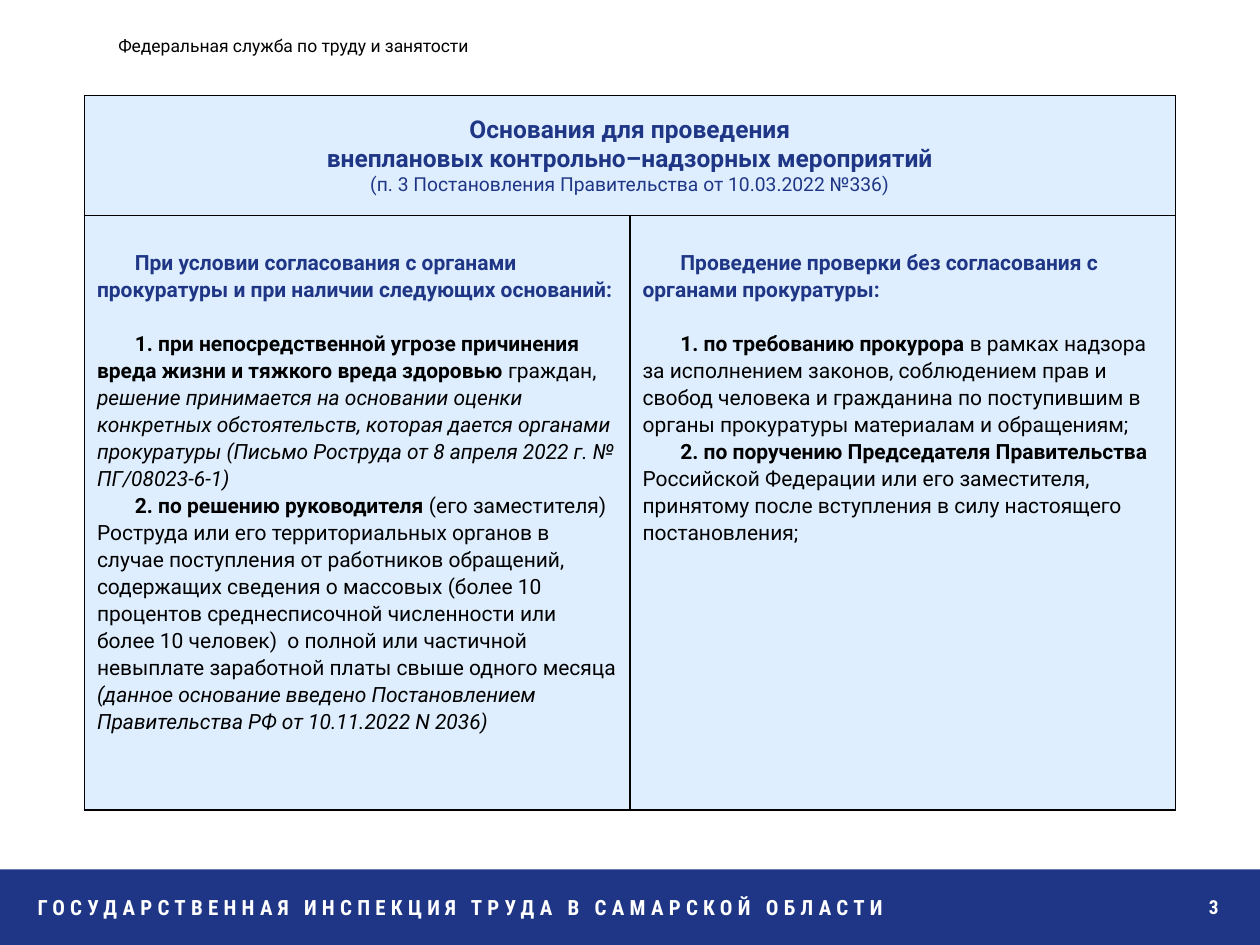
"""Build the slide on grounds for unscheduled labour inspections."""
from dataclasses import dataclass

from lxml import etree
from pptx import Presentation
from pptx import util as u
from pptx.dml.color import RGBColor
from pptx.enum import shapes, text
from pptx.oxml.ns import qn

NAVY, PALE, BLACK, WHITE = "1E3685", "DEEEFE", "000000", "FFFFFF"
BODY, NARROW = "Roboto", "Roboto Condensed"
WIDTH, HEIGHT = u.Inches(10), u.Inches(7.5)
LEFT, CENTER, RIGHT = text.PP_ALIGN.LEFT, text.PP_ALIGN.CENTER, text.PP_ALIGN.RIGHT
TOP, MIDDLE = text.MSO_ANCHOR.TOP, text.MSO_ANCHOR.MIDDLE


@dataclass(frozen=True)
class Span:
    """A stretch of text in one format."""
    words: str
    bold: bool = False
    italic: bool = False
    color: str = BLACK
    size: float = 12
    font: str = BODY
    tracking: float = 0


@dataclass(frozen=True)
class Line:
    """A paragraph made of spans."""
    spans: tuple[Span, ...]
    align: text.PP_ALIGN = LEFT
    indent: float = 0
    spacing: float = 1.0
    after: float = 0


@dataclass(frozen=True)
class Label:
    """A one-line text box placed in percent of the slide."""
    area: tuple[float, float, float, float]
    span: Span
    align: text.PP_ALIGN = LEFT
    anchor: text.MSO_ANCHOR = TOP
    grows: bool = True


def across(percent: float) -> int:
    """Return a share of the slide width."""
    return round(WIDTH * percent / 100)


def down(percent: float) -> int:
    """Return a share of the slide height."""
    return round(HEIGHT * percent / 100)


def place(left: float, top: float, width: float, height: float) -> tuple[int, int, int, int]:
    """Turn percentages into a slide area."""
    return across(left), down(top), across(width), down(height)


def paint(target, color: str) -> None:
    """Give a fill one solid colour."""
    target.solid()
    target.fore_color.rgb = RGBColor.from_string(color)


def write(frame, lines: tuple[Line, ...]) -> None:
    """Write formatted paragraphs into a text frame."""
    for index, line in enumerate(lines):
        paragraph = frame.add_paragraph() if index else frame.paragraphs[0]
        paragraph.alignment = line.align
        paragraph.line_spacing = line.spacing
        paragraph.space_after = u.Pt(line.after)
        if line.indent:
            paragraph._p.get_or_add_pPr().set("indent", str(u.Inches(line.indent)))
        for span in line.spans:
            run = paragraph.add_run()
            run.text = span.words
            run.font.name, run.font.size = span.font, u.Pt(span.size)
            run.font.bold, run.font.italic = span.bold, span.italic
            paint(run.font.fill, span.color)
            if span.tracking:
                run._r.get_or_add_rPr().set("spc", str(round(span.tracking * 100)))


def add_label(slide, label: Label) -> None:
    """Add a text box."""
    frame = slide.shapes.add_textbox(*place(*label.area)).text_frame
    frame.word_wrap = True
    frame.vertical_anchor = label.anchor
    if label.grows:
        frame.auto_size = text.MSO_AUTO_SIZE.SHAPE_TO_FIT_TEXT
    write(frame, (Line((label.span,), label.align),))


def outline(cell, color: str, points: float) -> None:
    """Draw all four borders of a cell."""
    properties = cell._tc.get_or_add_tcPr()
    for index, side in enumerate(("lnL", "lnR", "lnT", "lnB")):
        border = etree.Element(qn(f"a:{side}"), w=str(u.Pt(points)))
        solid = etree.SubElement(border, qn("a:solidFill"))
        etree.SubElement(solid, qn("a:srgbClr"), val=color)
        properties.insert(index, border)


def grounds(title: str, *items: tuple[Span, ...]) -> tuple[Line, ...]:
    """Return a column's heading followed by its numbered items."""
    heading = Line((Span(title, bold=True, color=NAVY),), indent=0.3, spacing=1.1, after=15.5)
    return heading, *(Line(item, indent=0.3, spacing=1.1) for item in items)


HEADING = tuple(Line((span,), CENTER) for span in (
    Span("Основания для проведения", True, color=NAVY, size=14),
    Span("внеплановых контрольно–надзорных мероприятий", True, color=NAVY, size=14),
    Span("(п. 3 Постановления Правительства от 10.03.2022 №336)", color=NAVY, size=11),
))

COLUMNS = (
    grounds(
        "При условии согласования с органами прокуратуры и при наличии следующих оснований:",
        (Span("1. при непосредственной угрозе причинения вреда жизни и тяжкого вреда здоровью ", True),
         Span("граждан, "),
         Span("решение принимается на основании оценки конкретных обстоятельств, которая дается "
              "органами прокуратуры (Письмо Роструда от 8 апреля 2022 г. № ПГ/08023-6-1)", italic=True)),
        (Span("2. по решению руководителя ", True),
         Span("(его заместителя) Роструда или его территориальных органов в случае поступления от "
              "работников обращений, содержащих сведения о массовых (более 10 процентов "
              "среднесписочной численности или более 10 человек)  о полной или частичной невыплате "
              "заработной платы свыше одного месяца "),
         Span("(данное основание введено Постановлением Правительства РФ от 10.11.2022 N 2036)",
              italic=True)),
    ),
    grounds(
        "Проведение проверки без согласования с органами прокуратуры:",
        (Span("1. по требованию прокурора ", True),
         Span("в рамках надзора за исполнением законов, соблюдением прав и свобод человека и "
              "гражданина по поступившим в органы прокуратуры материалам и обращениям;")),
        (Span("2. по поручению Председателя Правительства ", True),
         Span("Российской Федерации или его заместителя, принятому после вступления в силу "
              "настоящего постановления;")),
    ),
)

LABELS = (
    Label((8.4, 3.07, 36.1, 3.6), Span("Федеральная служба по труду и занятости", size=10)),
    Label((2, 94, 82.7, 4),
          Span("ГОСУДАРСТВЕННАЯ ИНСПЕКЦИЯ ТРУДА В САМАРСКОЙ ОБЛАСТИ",
               True, color=WHITE, font=NARROW, tracking=3)),
    Label((85.8, 93.33, 11.9, 5.33), Span("3", True, color=WHITE, size=11, font=NARROW),
          RIGHT, MIDDLE, grows=False),
)


def add_footer_band(slide) -> None:
    """Add the band along the bottom of the slide."""
    band = slide.shapes.add_shape(shapes.MSO_SHAPE.RECTANGLE, *place(0, 92, 100, 8))
    band.shadow.inherit = False
    paint(band.fill, NAVY)
    band.line.fill.background()


def add_grounds_table(slide) -> None:
    """Add the table with a merged heading over two columns."""
    table = slide.shapes.add_table(2, 2, *place(6.7, 10.13, 86.6, 75.6)).table
    table.first_row = table.horz_banding = False
    for row, share in zip(table.rows, (12.67, 62.93)):
        row.height = down(share)
    for cell in table.iter_cells():
        paint(cell.fill, PALE)
        outline(cell, BLACK, 1)
    title = table.cell(0, 0)
    title.merge(table.cell(0, 1))
    title.vertical_anchor = MIDDLE
    write(title.text_frame, HEADING)
    for index, lines in enumerate(COLUMNS):
        cell = table.cell(1, index)
        cell.margin_top = u.Inches(0.26)
        write(cell.text_frame, lines)


def main() -> None:
    """Build and save the slide."""
    deck = Presentation()
    deck.slide_width, deck.slide_height = WIDTH, HEIGHT
    slide = deck.slides.add_slide(deck.slide_layouts[6])
    add_footer_band(slide)
    for label in LABELS:
        add_label(slide, label)
    add_grounds_table(slide)
    deck.save("out.pptx")


if __name__ == "__main__":
    main()
